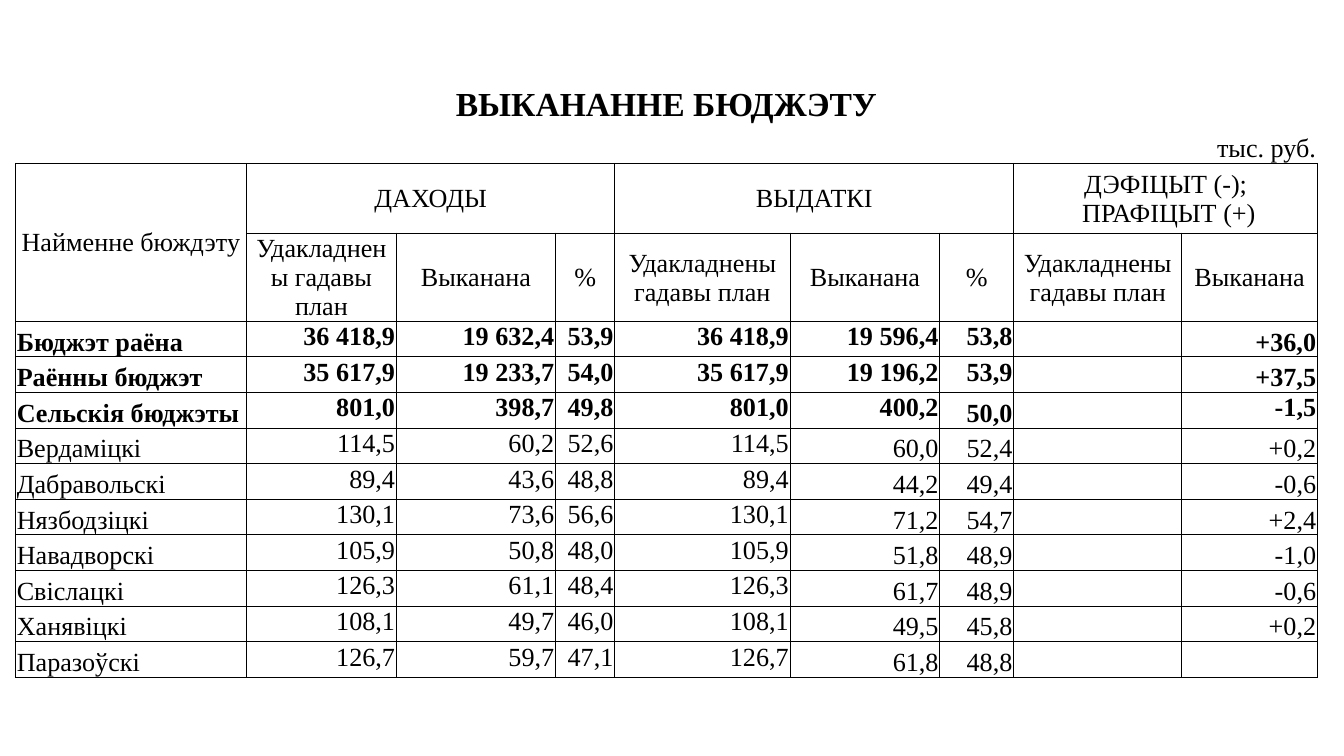
import lxml.etree
import pptx
import pptx.dml.color
import pptx.enum.text
import pptx.oxml.ns
import pptx.util

SCALE = 914400 // 200
FONT = "Times New Roman"
BLACK = "000000"
COLUMN_WIDTHS = [344, 200, 23, 157, 80, 88, 261, 178, 45, 110, 250, 24, 178]
ROW_HEIGHTS = [68, 53, 104, 131] + [53] * 10
BODY_STARTS = [0, 1, 3, 5, 6, 7, 9, 10, 11]
BODY_SPANS = {1: 2, 3: 2, 7: 2, 11: 2}
PLAN = "Удакладнены гадавы план"
DONE = "Выканана"
SUBHEADINGS = [PLAN, DONE, "%", PLAN, DONE, "%", PLAN, DONE]
GROUPS = [
    (1, 5, "ДАХОДЫ"),
    (6, 4, "ВЫДАТКІ"),
    (10, 3, "ДЭФІЦЫТ (-);\n ПРАФІЦЫТ (+)"),
]
BOLD_ROWS = 3
BUDGETS = [
    ("Бюджэт раёна", "36 418,9", "19 632,4", "53,9", "19 596,4", "53,8", "+36,0", "ttb"),
    ("Раённы бюджэт", "35 617,9", "19 233,7", "54,0", "19 196,2", "53,9", "+37,5", "ttb"),
    ("Сельскія бюджэты", "801,0", "398,7", "49,8", "400,2", "50,0", "-1,5", "tbt"),
    ("Вердаміцкі", "114,5", "60,2", "52,6", "60,0", "52,4", "+0,2", "bbb"),
    ("Дабравольскі", "89,4", "43,6", "48,8", "44,2", "49,4", "-0,6", "bbb"),
    ("Нязбодзіцкі", "130,1", "73,6", "56,6", "71,2", "54,7", "+2,4", "bbb"),
    ("Навадворскі", "105,9", "50,8", "48,0", "51,8", "48,9", "-1,0", "bbb"),
    ("Свіслацкі", "126,3", "61,1", "48,4", "61,7", "48,9", "-0,6", "bbb"),
    ("Ханявіцкі", "108,1", "49,7", "46,0", "49,5", "45,8", "+0,2", "bbb"),
    ("Паразоўскі", "126,7", "59,7", "47,1", "61,8", "48,8", "", "bbb"),
]
ANCHORS = {
    "t": pptx.enum.text.MSO_ANCHOR.TOP,
    "m": pptx.enum.text.MSO_ANCHOR.MIDDLE,
    "b": pptx.enum.text.MSO_ANCHOR.BOTTOM,
}
ALIGNMENTS = {
    "l": pptx.enum.text.PP_ALIGN.LEFT,
    "c": pptx.enum.text.PP_ALIGN.CENTER,
    "r": pptx.enum.text.PP_ALIGN.RIGHT,
}


def px(length):
    return pptx.util.Emu(length * SCALE)


def color(value):
    return pptx.dml.color.RGBColor.from_string(value)


def apply_format(target, values):
    for name, value in values.items():
        setattr(target, name, value)


def add_element(parent, tag, **attributes):
    return lxml.etree.SubElement(parent, pptx.oxml.ns.qn(tag), attributes)


def set_borders(cell, visible_sides):
    properties = cell._tc.get_or_add_tcPr()
    for side in "LRTB":
        line = add_element(properties, f"a:ln{side}", w=str(pptx.util.Pt(0.5)))
        if side in visible_sides:
            fill = add_element(line, "a:solidFill")
            add_element(fill, "a:srgbClr", val=BLACK)
        else:
            add_element(line, "a:noFill")


def prepare_cell(cell, row):
    apply_format(cell, {
        "margin_left": px(2), "margin_right": px(2),
        "margin_top": px(2), "margin_bottom": px(0),
    })
    set_borders(cell, {0: "", 1: "B"}.get(row, "LRTB"))
    cell.fill.background()
    paragraph = cell.text_frame.paragraphs[0]
    add_element(paragraph._p, "a:endParaRPr", sz="1400")


def write_cell(cell, text, alignment="c", anchor="m", size=14, bold=False):
    cell.text = text
    cell.vertical_anchor = ANCHORS[anchor]
    for paragraph in cell.text_frame.paragraphs:
        paragraph.alignment = ALIGNMENTS[alignment]
        for run in paragraph.runs:
            apply_format(run.font, {"name": FONT, "size": pptx.util.Pt(size), "bold": bold})
            run.font.color.rgb = color(BLACK)


def merge_cells(table, row, column, row_span, column_span):
    last = table.cell(row + row_span - 1, column + column_span - 1)
    table.cell(row, column).merge(last)


def add_grid(slide):
    frame = slide.shapes.add_table(
        len(ROW_HEIGHTS), len(COLUMN_WIDTHS), px(23), px(122),
        px(sum(COLUMN_WIDTHS)), px(sum(ROW_HEIGHTS)))
    table = frame.table
    apply_format(table, {"first_row": False, "horz_banding": False})
    for column, width in zip(table.columns, COLUMN_WIDTHS):
        column.width = px(width)
    for row, height in enumerate(ROW_HEIGHTS):
        table.rows[row].height = px(height)
        for cell in table.rows[row].cells:
            prepare_cell(cell, row)
    return table


def fill_headings(table):
    merge_cells(table, 0, 0, 1, len(COLUMN_WIDTHS))
    write_cell(table.cell(0, 0), "ВЫКАНАННЕ БЮДЖЭТУ", size=18, bold=True)
    for column in (2, 4, 8, 10):
        merge_cells(table, 1, column, 1, 2)
    write_cell(table.cell(1, 12), "тыс. руб.", "r", "b")
    merge_cells(table, 2, 0, 2, 1)
    write_cell(table.cell(2, 0), "Найменне бюждэту")
    for column, span, heading in GROUPS:
        merge_cells(table, 2, column, 1, span)
        write_cell(table.cell(2, column), heading)
    for column, heading in zip(BODY_STARTS[1:], SUBHEADINGS):
        write_cell(table.cell(3, column), heading)


def fill_budgets(table):
    for index, budget in enumerate(BUDGETS):
        name, plan, income, income_share, spending, spending_share, balance, ends = budget
        texts = [name, plan, income, income_share, plan, spending, spending_share, "", balance]
        anchors = "btttt" + ends[:2] + "t" + ends[2]
        for column, text, anchor in zip(BODY_STARTS, texts, anchors):
            if text:
                alignment = "r" if column else "l"
                write_cell(table.cell(index + 4, column), text, alignment, anchor,
                           bold=index < BOLD_ROWS)


def main():
    presentation = pptx.Presentation()
    apply_format(presentation, {"slide_width": px(2000), "slide_height": px(1125)})
    slide = presentation.slides.add_slide(presentation.slide_layouts[6])
    table = add_grid(slide)
    for row in range(3, len(ROW_HEIGHTS)):
        for column, span in BODY_SPANS.items():
            merge_cells(table, row, column, 1, span)
    fill_headings(table)
    fill_budgets(table)
    presentation.save("out.pptx")


if __name__ == "__main__":
    main()
